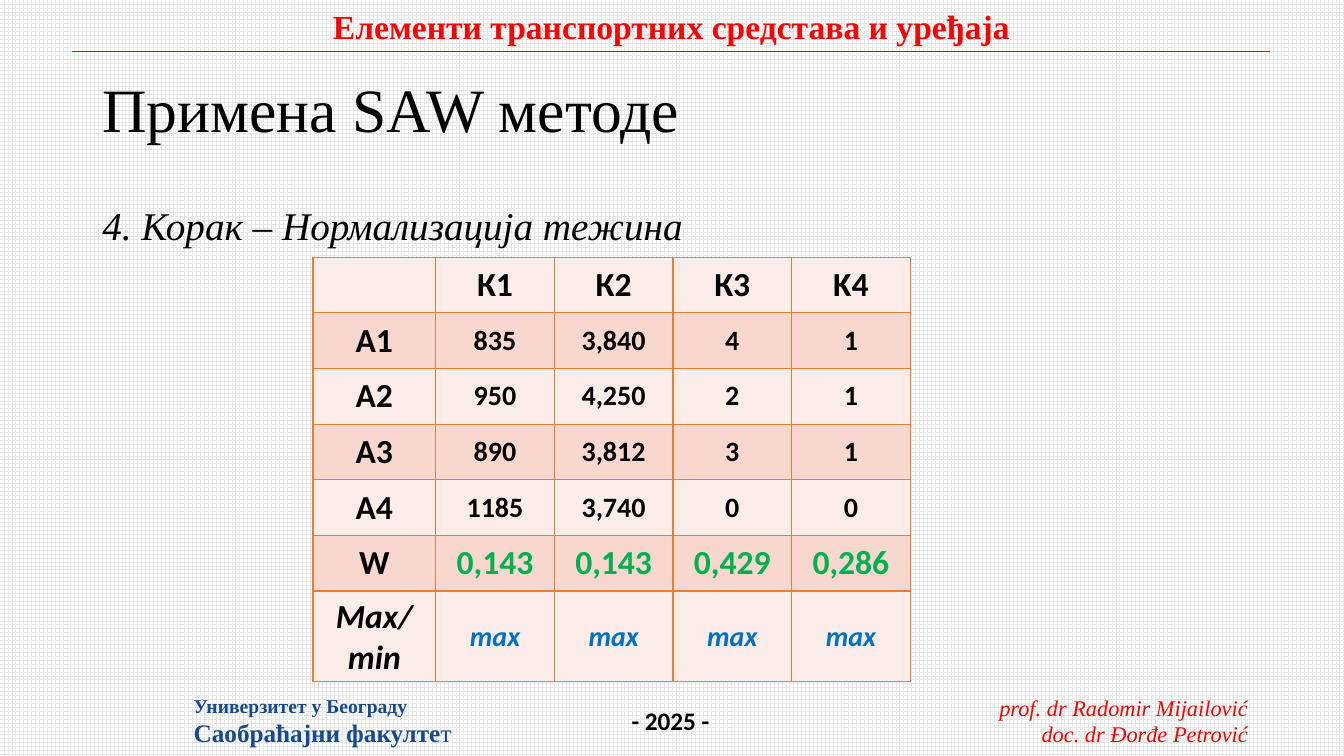
from lxml import etree
from pptx import Presentation
from pptx import util as u
from pptx.dml.color import RGBColor
from pptx.enum import dml, shapes, text
from pptx.oxml.ns import qn

PX = 9525
SERIF, SANS = "Times New Roman", "Calibri"
BLACK, RED, NAVY, GREEN, BLUE = "000000", "FF0000", "16498E", "00B050", "0070C0"
ORANGE, LIGHT, DARK = "ED7D31", "FCECE8", "F8D7CE"
LEFT, CENTER, RIGHT = text.PP_ALIGN.LEFT, text.PP_ALIGN.CENTER, text.PP_ALIGN.RIGHT

ROWS = [
    ["", "К1", "К2", "К3", "K4"],
    ["А1", "835", "3,840", "4", "1"],
    ["А2", "950", "4,250", "2", "1"],
    ["А3", "890", "3,812", "3", "1"],
    ["A4", "1185", "3,740", "0", "0"],
    ["W", "0,143", "0,143", "0,429", "0,286"],
    ["Max/min", "max", "max", "max", "max"],
]


def rgb(color):
    return RGBColor.from_string(color)


class Deck:
    def __init__(self):
        self.prs = Presentation()
        self.prs.slide_width, self.prs.slide_height = 1280 * PX, 720 * PX
        self.s = self.prs.slides.add_slide(self.prs.slide_layouts[5])

    def background(self, fore, back):
        fill = self.s.background.fill
        fill.patterned()
        fill.pattern = dml.MSO_PATTERN.LARGE_GRID
        fill.fore_color.rgb, fill.back_color.rgb = rgb(fore), rgb(back)

    def style(self, r, size, color, font=SERIF, bold=False, italic=False):
        f = r.font
        f.size, f.name, f.bold, f.italic = u.Pt(size), font, bold, italic
        f.color.rgb = rgb(color)

    def title(self, x, y, w, h, words, size):
        sp = self.s.shapes.title
        sp.left, sp.top, sp.width, sp.height = (n * PX for n in (x, y, w, h))
        tf = sp.text_frame
        tf.text = words
        tf.auto_size = text.MSO_AUTO_SIZE.NONE
        tf.vertical_anchor = text.MSO_ANCHOR.MIDDLE
        p = tf.paragraphs[0]
        p.alignment, p.line_spacing = LEFT, 0.9
        self.style(p.runs[0], size, BLACK)

    def text(self, x, y, w, h, words, sizes, color, align=LEFT, wrap=False,
             spacing=None, **look):
        tf = self.s.shapes.add_textbox(x * PX, y * PX, w * PX, h * PX).text_frame
        tf.text = words
        tf.word_wrap = wrap
        if not wrap:
            tf.auto_size = text.MSO_AUTO_SIZE.SHAPE_TO_FIT_TEXT
        for p, size in zip(tf.paragraphs, sizes):
            p.alignment, p.line_spacing = align, spacing
            self.style(p.runs[0], size, color, **look)
        return tf

    def line(self, x1, y1, x2, y2, color, width):
        c = self.s.shapes.add_connector(
            shapes.MSO_CONNECTOR.STRAIGHT, x1 * PX, y1 * PX, x2 * PX, y2 * PX)
        c.line.color.rgb, c.line.width = rgb(color), u.Pt(width)
        etree.SubElement(c._element.spPr, qn("a:effectLst"))

    def borders(self, cell, color, width):
        tcPr = cell._tc.get_or_add_tcPr()
        for side in ("lnL", "lnR", "lnT", "lnB"):
            ln = etree.SubElement(tcPr, qn("a:" + side), w=str(u.Pt(width)))
            fill = etree.SubElement(ln, qn("a:solidFill"))
            etree.SubElement(fill, qn("a:srgbClr"), val=color)

    def table(self, x, y, widths, row_height, rows, look):
        frame = self.s.shapes.add_table(
            len(rows), len(widths), x * PX, y * PX,
            sum(widths) * PX, row_height * len(rows) * PX)
        tbl = frame.table
        tbl.first_row = tbl.horz_banding = False
        for col, w in zip(tbl.columns, widths):
            col.width = w * PX
        for i, values in enumerate(rows):
            tbl.rows[i].height = row_height * PX
            for j, value in enumerate(values):
                cell = tbl.cell(i, j)
                self.borders(cell, ORANGE, 1)
                cell.fill.solid()
                cell.fill.fore_color.rgb = rgb(DARK if i % 2 else LIGHT)
                cell.vertical_anchor = text.MSO_ANCHOR.MIDDLE
                p = cell.text_frame.paragraphs[0]
                p.text, p.alignment = value, CENTER
                for r in p.runs:
                    self.style(r, font=SANS, bold=True, **look(i, j))


def cell_look(i, j):
    weights, goals = len(ROWS) - 2, len(ROWS) - 1
    color = {weights: GREEN, goals: BLUE}.get(i, BLACK) if j else BLACK
    size = 24 if j == 0 or i in (0, weights) else 20
    return dict(size=size, color=color, italic=i == goals)


def main():
    d = Deck()
    d.background("E7E6E6", "FFFFFF")
    d.text(938, 656, 260, 61, "prof. dr Radomir Mijailović\ndoc. dr Đorđe Petrović",
           [16, 16], RED, RIGHT, italic=True)
    d.line(69, 49, 1210, 49, RED, 0.5)
    d.text(304, 1, 671, 48, "Елементи транспортних средстава и уређаја",
           [24], RED, CENTER, bold=True)
    d.text(592, 667, 94, 38, "- 2025 -", [18], BLACK, font=SANS, bold=True)
    tf = d.text(175, 656, 268, 61, "Универзитет у Београду\nСаобраћајни факулте",
                [14, 18], NAVY, bold=True)
    r = tf.paragraphs[1].add_run()
    r.text = "т"
    d.style(r, 18, NAVY)
    d.title(88, 38, 1104, 139, "Примена SAW методе", 44)
    d.text(88, 192, 1104, 457, "4. Корак – Нормализација тежина", [28], BLACK,
           wrap=True, spacing=0.9, italic=True)
    d.table(298, 245, [117] + [113] * 4, 53, ROWS, cell_look)
    d.prs.save("out.pptx")


if __name__ == "__main__":
    main()
